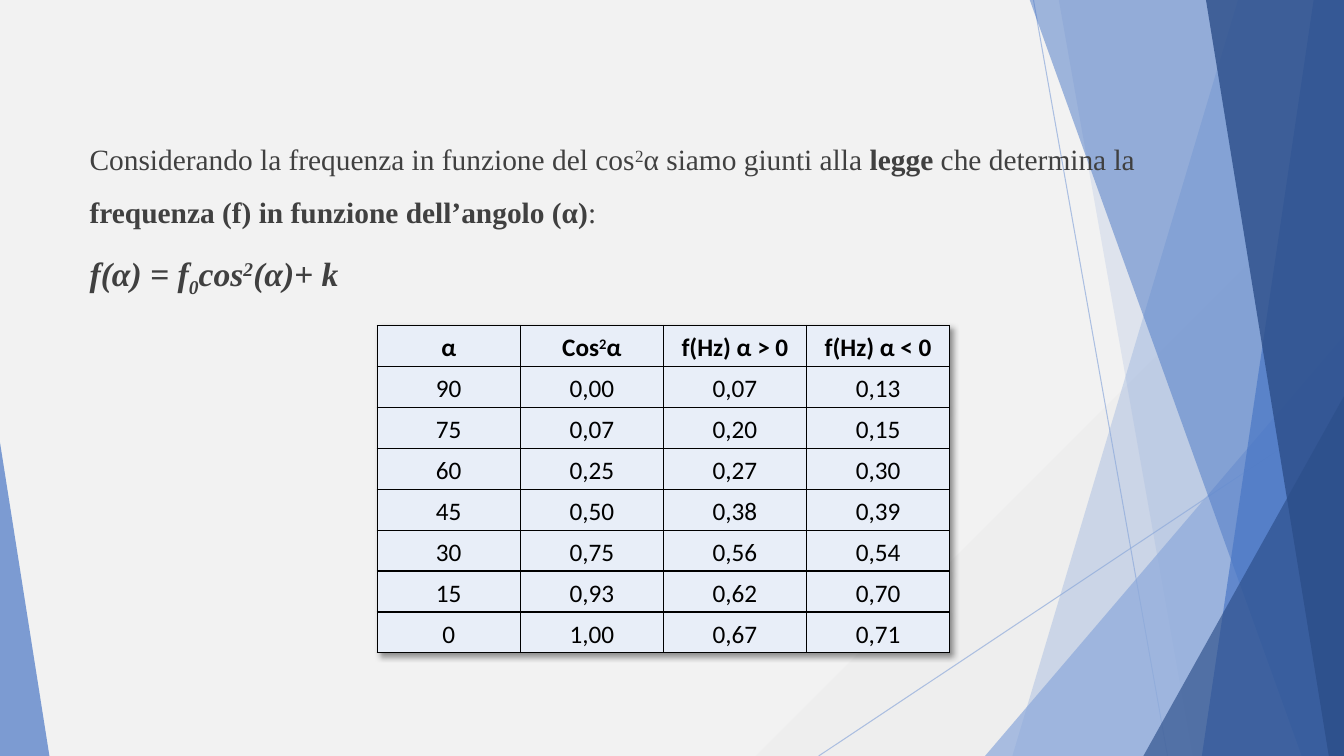
"""Build the slide on frequency as a function of the angle."""
from dataclasses import dataclass

from lxml.etree import SubElement
from pptx import Presentation
from pptx.dml.color import RGBColor
from pptx.enum.shapes import MSO_CONNECTOR as Connector, MSO_SHAPE as Preset
from pptx.enum.text import MSO_ANCHOR as Anchor, PP_ALIGN as Align
from pptx.oxml import parse_xml
from pptx.oxml.ns import nsdecls, qn
from pptx.util import Inches, Pt

Point = tuple[float, float]
TOP, BOTTOM, RIGHT = -0.01, 7.5, 13.33
PALE, MID, DARK = "8EAADB", "4A77C5", "2C4E89"


@dataclass
class Ray:
    start: Point
    end: Point


@dataclass
class Band:
    top_left: float
    bottom_left: float
    colour: str
    opacity: int


@dataclass
class Corner:
    left: float
    top: float
    width: float
    apex: float
    colour: str
    opacity: int


RAYS = [Ray((10.25, 0), (11.58, BOTTOM)), Ray((RIGHT, 4.03), (8.12, BOTTOM))]
FACETS = [
    Band(12.28, 10.04, PALE, 36),
    Band(10.5, 11.83, PALE, 20),
    Corner(9.77, 3.33, 3.56, 1, PALE, 72),
    Band(10.21, 12.91, MID, 50),
    Band(13.03, 11.92, MID, 70),
    Band(11.96, 13.18, DARK, 80),
    Corner(11.34, 3.93, 1.99, 1, DARK, 66),
    Corner(0, 4.39, 0.49, 0, MID, 70),
]
MEASURES = [
    ("90", "0,00", "0,07", "0,13"),
    ("75", "0,07", "0,20", "0,15"),
    ("60", "0,25", "0,27", "0,30"),
    ("45", "0,50", "0,38", "0,39"),
    ("30", "0,75", "0,56", "0,54"),
    ("15", "0,93", "0,62", "0,70"),
    ("0", "1,00", "0,67", "0,71"),
]
HEADINGS = [[("α", 0)], [("Cos", 0), ("2", 30), ("α", 0)],
            [("f(Hz) α > 0", 0)], [("f(Hz) α < 0", 0)]]


def rgb(colour: str) -> RGBColor:
    """Turn a hex string into a colour."""
    return RGBColor.from_string(colour)


def set_opacity(fill_owner, percent: int) -> None:
    """Make the solid fill found inside an element translucent."""
    tint = fill_owner.find(".//" + qn("a:solidFill"))[0]
    SubElement(tint, qn("a:alpha")).set("val", str(percent * 1000))


def add_text(paragraph, text: str, *, size: float, font: str, colour: str,
             bold: bool = False, italic: bool = False, baseline: int = 0) -> None:
    """Append formatted text to a paragraph."""
    run = paragraph.add_run()
    run.text = text
    run.font.size, run.font.name = Pt(size), font
    run.font.bold, run.font.italic = bold, italic
    run.font.color.rgb = rgb(colour)
    if baseline:
        run.font._element.set("baseline", str(baseline * 1000))


def draw_ray(slide, ray: Ray) -> None:
    """Draw one thin decorative line."""
    line = slide.shapes.add_connector(
        Connector.STRAIGHT, *(Inches(v) for v in ray.start + ray.end))
    line.line.color.rgb, line.line.width = rgb(PALE), Pt(0.75)
    properties = line._element.spPr
    set_opacity(properties, 70)
    SubElement(properties, qn("a:effectLst"))


def draw_facet(slide, facet: Band | Corner) -> None:
    """Draw one translucent decorative area."""
    if isinstance(facet, Band):
        outline = slide.shapes.build_freeform(Inches(facet.top_left), Inches(TOP))
        outline.add_line_segments(
            [(Inches(x), Inches(y)) for x, y in
             ((RIGHT, TOP), (RIGHT, BOTTOM), (facet.bottom_left, BOTTOM))], close=True)
        area = outline.convert_to_shape()
    else:
        area = slide.shapes.add_shape(
            Preset.ISOSCELES_TRIANGLE, Inches(facet.left), Inches(facet.top),
            Inches(facet.width), Inches(BOTTOM - facet.top))
        area.adjustments[0] = facet.apex
    area.shadow.inherit = False
    area.fill.solid()
    area.fill.fore_color.rgb = rgb(facet.colour)
    area.line.fill.background()
    set_opacity(area._element.spPr, facet.opacity)


def draw_law(slide) -> None:
    """Write the introduction and the formula."""
    frame = slide.shapes.add_textbox(
        Inches(0.79), Inches(1.18), Inches(11.81), Inches(2.21)).text_frame
    frame.word_wrap = True
    law = frame.paragraphs[0]
    law.line_spacing, law.space_before = 1.5, Pt(10)
    style = {"font": "Times New Roman", "colour": "404040"}
    for text, bold, baseline in [
        ("Considerando la frequenza in funzione del cos", False, 0),
        ("2", False, 30),
        ("α siamo giunti alla ", False, 0),
        ("legge", True, 0),
        (" che determina la ", False, 0),
        ("frequenza (f) in funzione dell’angolo (α)", True, 0),
        (":", False, 0),
    ]:
        add_text(law, text, size=21, bold=bold, baseline=baseline, **style)
    law.add_line_break()
    for text, baseline in [("f(α) = f", 0), ("0", -25), ("cos", 0),
                           ("2", 30), ("(α)+ k", 0)]:
        add_text(law, text, size=24, bold=True, italic=True, baseline=baseline, **style)


def fill_cell(cell, pieces: list[tuple[str, int]], bold: bool) -> None:
    """Style one table cell and write its text."""
    properties = cell._tc.get_or_add_tcPr()
    for side in "LRTB":
        properties.append(parse_xml(
            f'<a:ln{side} {nsdecls("a")} w="12700"><a:solidFill>'
            f'<a:srgbClr val="000000"/></a:solidFill></a:ln{side}>'))
    cell.fill.solid()
    cell.fill.fore_color.rgb = rgb("E8EEF8")
    cell.vertical_anchor = Anchor.MIDDLE
    cell.margin_left = cell.margin_right = Inches(0.05)
    cell.margin_top = cell.margin_bottom = 0
    line = cell.text_frame.paragraphs[0]
    line.alignment, line.line_spacing = Align.CENTER, 1.15
    for text, baseline in pieces:
        add_text(line, text, size=18, font="Calibri", colour="000000",
                 bold=bold, baseline=baseline)


def draw_measures(slide) -> None:
    """Draw the table of measured frequencies."""
    rows = [HEADINGS] + [[[(value, 0)] for value in row] for row in MEASURES]
    table = slide.shapes.add_table(
        len(rows), len(HEADINGS), Inches(3.74), Inches(3.23),
        Inches(5.68), Inches(3.25)).table
    table.first_row = table.horz_banding = False
    table._tbl.tblPr.insert(0, parse_xml(
        f'<a:effectLst {nsdecls("a")}><a:outerShdw blurRad="50800" dist="38100" '
        'dir="2700000" algn="tl"><a:srgbClr val="000000"><a:alpha val="40000"/>'
        '</a:srgbClr></a:outerShdw></a:effectLst>'))
    for r, row in enumerate(rows):
        for c, pieces in enumerate(row):
            fill_cell(table.cell(r, c), pieces, bold=r == 0)


def main() -> None:
    """Assemble and save the slide."""
    deck = Presentation()
    deck.slide_width, deck.slide_height = Inches(RIGHT), Inches(BOTTOM)
    slide = deck.slides.add_slide(deck.slide_layouts[6])
    backdrop = slide.background.fill
    backdrop.gradient()
    backdrop.gradient_angle = 315
    for stop, (position, colour) in zip(backdrop.gradient_stops,
                                        [(0.44, "F2F2F2"), (1, "EEEEEE")]):
        stop.position, stop.color.rgb = position, rgb(colour)
    for ray in RAYS:
        draw_ray(slide, ray)
    for facet in FACETS:
        draw_facet(slide, facet)
    draw_law(slide)
    draw_measures(slide)
    deck.save("out.pptx")


if __name__ == "__main__":
    main()
